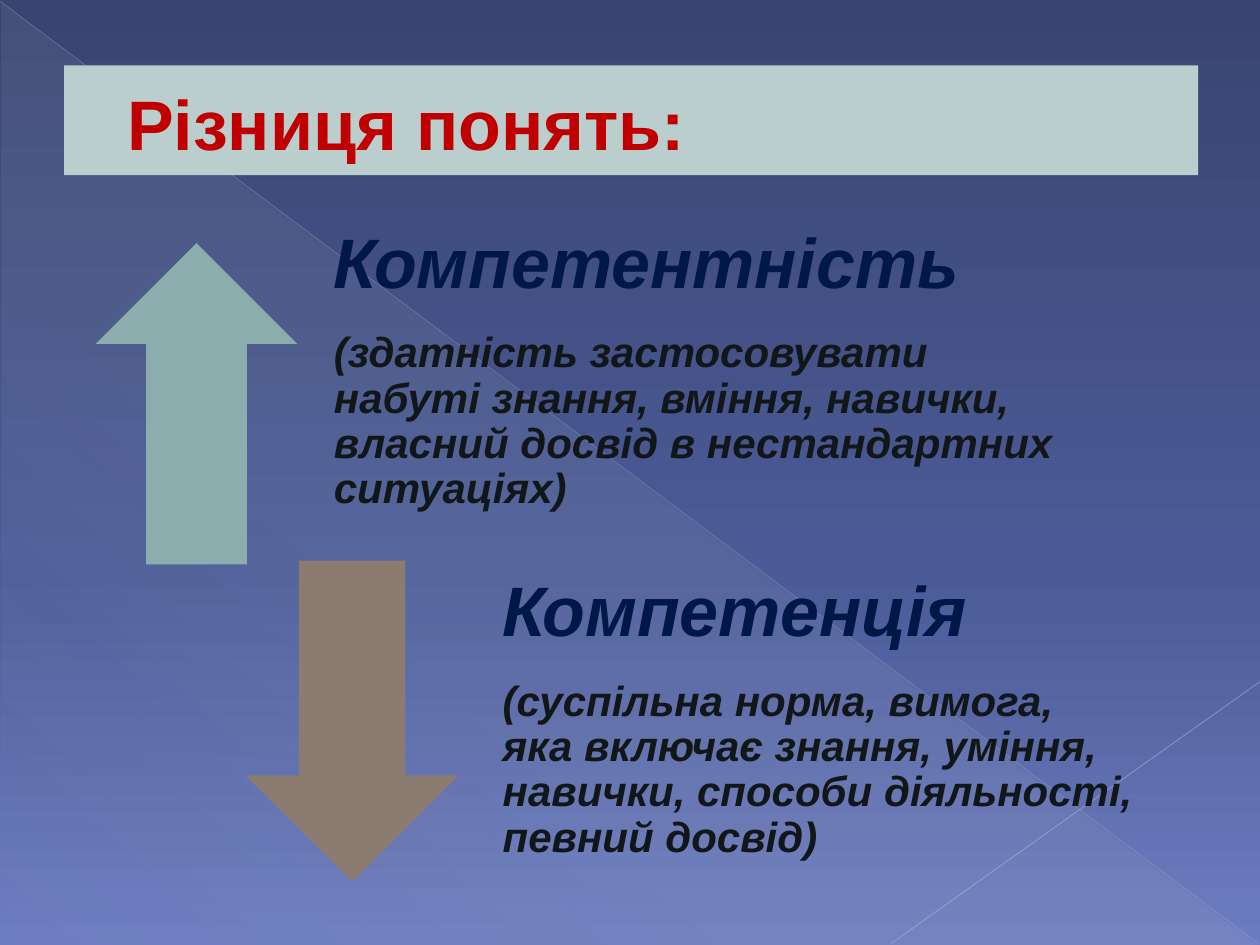
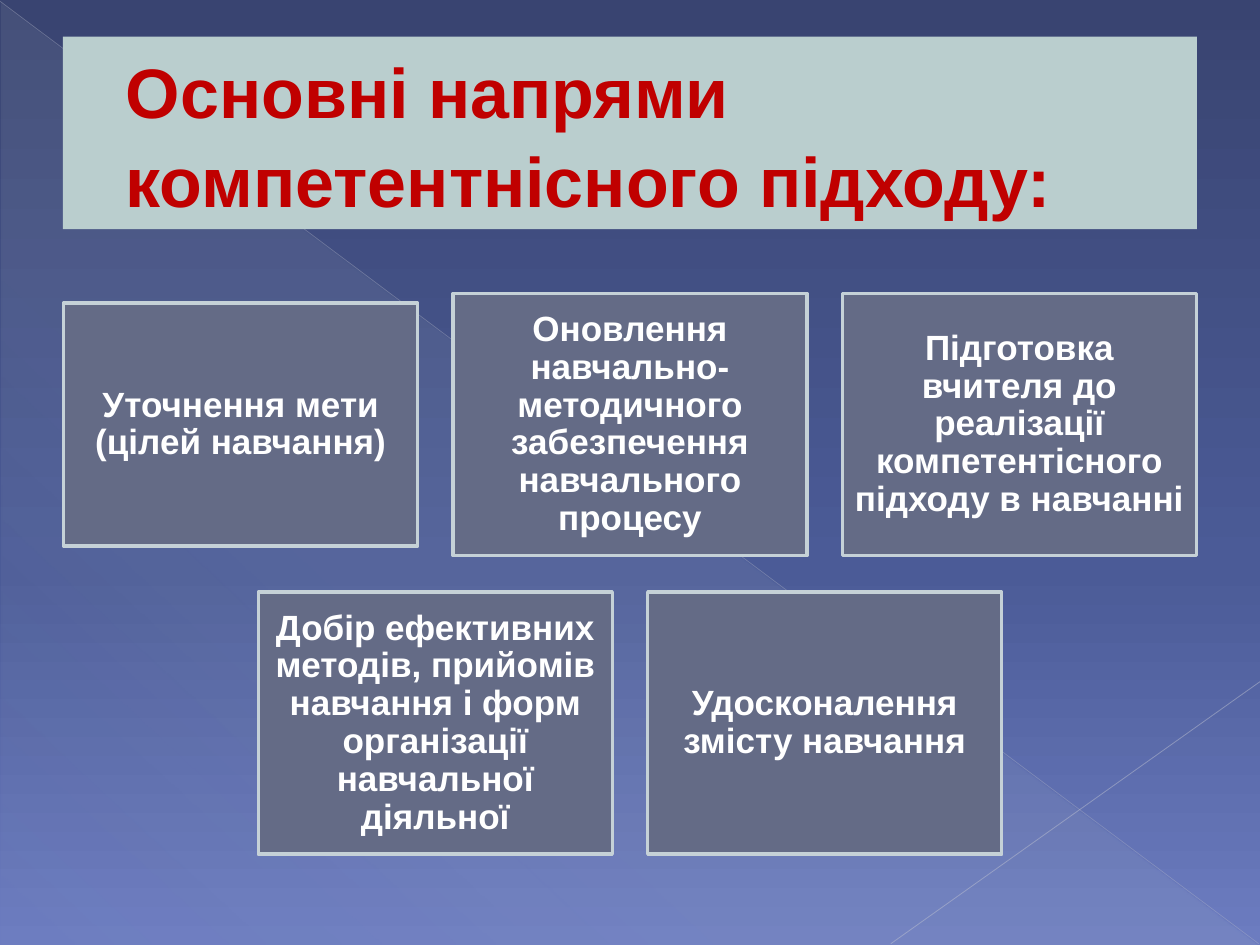
import pptx
import pptx.util
import pptx.dml.color
import pptx.enum.shapes
import pptx.enum.text
import pptx.oxml
import pptx.oxml.ns
import lxml.etree

Inches = pptx.util.Inches
Pt = pptx.util.Pt
Shape = pptx.enum.shapes.MSO_SHAPE
Align = pptx.enum.text.PP_ALIGN

FONT = "Arial"
BAND, TITLE_RED = "BACECE", "C00000"
TERM_NAVY, BODY_DARK = "001848", "111618"
CARD, CARD_EDGE, WHITE = "646B86", "C5D1D7", "FFFFFF"
WIDTH, HEIGHT = 10, 7.5
BACKDROP = [(0, "394471", 100), (60, "4B5B97", 100), (100, "6C7CC0", 100)]
VEIL = [(0, "C5D1D7", 10), (70, "C5D1D7", 8), (100, "C5D1D7", 1)]
RAYS = [
    (0, 0.01, 9.99, 7.49, "BABECD", 0.39, 35),
    (10, 5.41, 7.07, 7.49, "C2C5D2", 0.47, 45),
]


def colour(code):
    return pptx.dml.color.RGBColor.from_string(code)


def write(box, paragraphs, margins, align=Align.LEFT, spacing=0.9, italic=False):
    frame = box.text_frame
    frame.word_wrap = True
    frame.vertical_anchor = pptx.enum.text.MSO_ANCHOR.MIDDLE
    sides = ("margin_left", "margin_top", "margin_right", "margin_bottom")
    for side, margin in zip(sides, margins):
        setattr(frame, side, Inches(margin))
    for index, (text, size, code, after) in enumerate(paragraphs):
        para = frame.add_paragraph() if index else frame.paragraphs[0]
        para.alignment = align
        para.line_spacing = spacing
        para.space_after = Pt(after)
        span = para.add_run()
        span.text = text
        span.font.name = FONT
        span.font.size = Pt(size)
        span.font.bold = True
        span.font.italic = italic
        span.font.color.rgb = colour(code)


deck = pptx.Presentation()
deck.slide_width = Inches(WIDTH)
deck.slide_height = Inches(HEIGHT)

titles = [
    ("Різниця понять:", 0.51, 0.52, 0.87),
    ("Основні напрями компетентнісного підходу:", 0.5, 0.29, 1.53),
]
pages = []
for title, left, top, height in titles:
    page = deck.slides.add_slide(deck.slide_layouts[6])
    pages.append(page)
    page.background.fill.solid()
    page.background.fill.fore_color.rgb = colour(BACKDROP[0][1])
    veil = page.shapes.add_shape(
        Shape.RIGHT_TRIANGLE, Inches(0.01), Inches(0.02), Inches(9.98), Inches(7.48))
    veil.shadow.inherit = False
    veil.line.fill.background()
    veil.fill.solid()
    veil.fill.fore_color.rgb = colour(VEIL[0][1])

    gradients = [
        (page.element.xpath(".//p:bgPr/a:solidFill")[0], BACKDROP, 90),
        (veil.element.xpath("./p:spPr/a:solidFill")[0], VEIL, 133),
    ]
    for solid, stops, angle in gradients:
        marks = "".join(
            f'<a:gs pos="{place * 1000}"><a:srgbClr val="{code}">'
            f'<a:alpha val="{alpha * 1000}"/></a:srgbClr></a:gs>'
            for place, code, alpha in stops)
        gradient = pptx.oxml.parse_xml(
            f'<a:gradFill {pptx.oxml.ns.nsdecls("a")} rotWithShape="1">'
            f'<a:gsLst>{marks}</a:gsLst>'
            f'<a:lin ang="{angle * 60000}" scaled="0"/></a:gradFill>')
        solid.getparent().replace(solid, gradient)

    for x1, y1, x2, y2, code, weight, alpha in RAYS:
        ray = page.shapes.add_connector(
            pptx.enum.shapes.MSO_CONNECTOR.STRAIGHT,
            Inches(x1), Inches(y1), Inches(x2), Inches(y2))
        ray.line.width = Pt(weight)
        ray.line.color.rgb = colour(code)
        tint = ray.element.xpath(".//a:ln//a:srgbClr")[0]
        lxml.etree.SubElement(tint, pptx.oxml.ns.qn("a:alpha")).set("val", str(alpha * 1000))
        lxml.etree.SubElement(ray.element.spPr, pptx.oxml.ns.qn("a:effectLst"))

    band = page.shapes.add_shape(
        Shape.RECTANGLE, Inches(left), Inches(top), Inches(WIDTH * 0.9), Inches(height))
    band.shadow.inherit = False
    band.fill.solid()
    band.fill.fore_color.rgb = colour(BAND)
    band.line.fill.background()
    write(band, [(title, 40, TITLE_RED, 0)], (0.5, 0.05, 0.1, 0.05), spacing=1.05)

concepts_page, directions_page = pages

concepts = [
    (Shape.UP_ARROW, "8CADAE", (0.76, 1.93, 1.6, 2.55), (2.34, 1.82, 6.52, 2.55),
     "Компетентність",
     "(здатність застосовувати набуті знання, вміння, навички, "
     "власний досвід в нестандартних ситуаціях)"),
    (Shape.DOWN_ARROW, "8C7B70", (1.95, 4.45, 1.69, 2.55), (3.68, 4.5, 5.63, 2.72),
     "Компетенція",
     "(суспільна норма, вимога, яка включає знання, уміння, навички, "
     "способи діяльності, певний досвід)"),
]
for kind, code, arrow_place, text_place, term, meaning in concepts:
    arrow = concepts_page.shapes.add_shape(kind, *map(Inches, arrow_place))
    arrow.shadow.inherit = False
    arrow.fill.solid()
    arrow.fill.fore_color.rgb = colour(code)
    arrow.line.fill.background()
    box = concepts_page.shapes.add_textbox(*map(Inches, text_place))
    write(box, [(term, 40, TERM_NAVY, 16), (meaning, 24, BODY_DARK, 0)],
          (0.31, 0, 0.31, 0.31), italic=True)

CARD_WIDTH, CARD_GAP = 2.81, 0.28
directions = [
    (3.37, [
        ("Уточнення мети (цілей навчання)", 1.93),
        ("Оновлення навчально-методичного забезпечення навчального процесу", 2.08),
        ("Підготовка вчителя до реалізації компетентісного підходу в навчанні", 2.08),
    ]),
    (5.74, [
        ("Добір ефективних методів, прийомів навчання і форм організації "
         "навчальної діяльної", 2.08),
        ("Удосконалення змісту навчання", 2.08),
    ]),
]
for middle, cards in directions:
    row_width = len(cards) * (CARD_WIDTH + CARD_GAP) - CARD_GAP
    for column, (text, height) in enumerate(cards):
        left = (WIDTH - row_width) / 2 + column * (CARD_WIDTH + CARD_GAP)
        card = directions_page.shapes.add_shape(
            Shape.RECTANGLE, Inches(left), Inches(middle - height / 2),
            Inches(CARD_WIDTH), Inches(height))
        card.shadow.inherit = False
        card.fill.solid()
        card.fill.fore_color.rgb = colour(CARD)
        card.line.color.rgb = colour(CARD_EDGE)
        card.line.width = Pt(2)
        write(card, [(text, 20, WHITE, 0)], [0.08] * 4, Align.CENTER)

deck.save("out.pptx")
